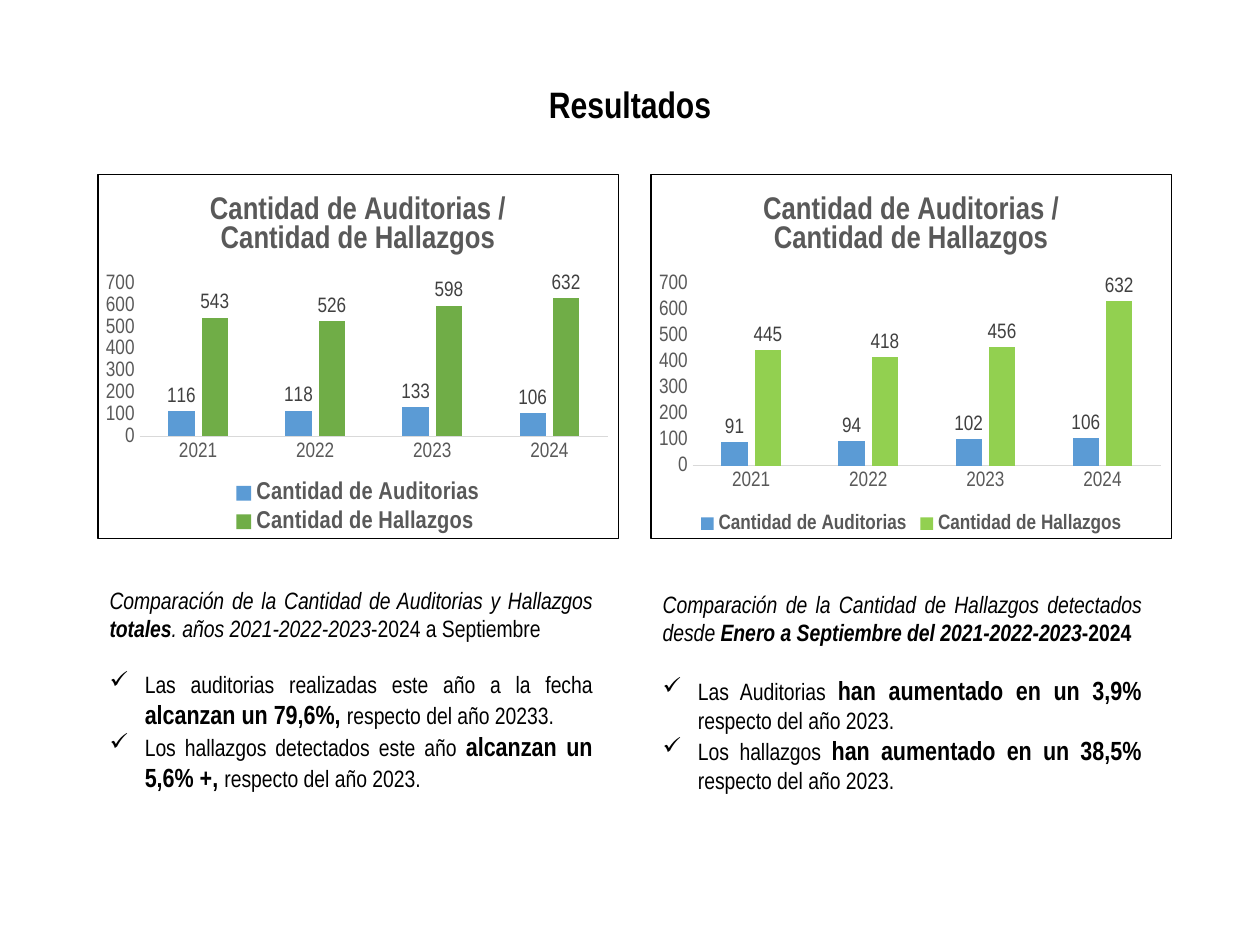
from lxml.etree import SubElement
from pptx import Presentation
from pptx.chart.data import CategoryChartData
from pptx.dml.color import RGBColor
from pptx.enum.chart import XL_CHART_TYPE as ChartType
from pptx.enum.chart import XL_LABEL_POSITION as LabelPosition
from pptx.enum.chart import XL_LEGEND_POSITION as LegendPosition
from pptx.enum.chart import XL_TICK_MARK as TickMark
from pptx.enum.text import MSO_ANCHOR, MSO_AUTO_SIZE, PP_ALIGN
from pptx.oxml import parse_xml
from pptx.oxml.ns import nsdecls, qn
from pptx.util import Cm, Pt

FONT = "Arial Narrow"
COLORS = {
    "text": "000000",
    "chart_text": "595959",
    "label": "404040",
    "axis": "D9D9D9",
    "audits": "5B9BD5",
    "findings": "70AD47",
    "findings_to_september": "92D050",
    "background": "FFFFFF",
}
YEARS = ["2021", "2022", "2023", "2024"]
CHART_TITLE = "Cantidad de Auditorias / Cantidad de Hallazgos"
CHART_TOP, CHART_WIDTH, CHART_HEIGHT = Cm(3.5), Cm(10.52), Cm(7.37)
LEFT_COLUMN, RIGHT_COLUMN = Cm(1.96), Cm(13.11)
BULLET_INDENT = Cm(0.71)


def color(name):
    """Return the named colour."""
    return RGBColor.from_string(COLORS[name])


def set_font(font, size, color_name, bold=False):
    """Apply the slide's typeface with a size, colour and weight."""
    font.name, font.size, font.bold = FONT, Pt(size), bold
    font.color.rgb = color(color_name)


def add_title(slide, text):
    """Place and format the slide title."""
    title = slide.shapes.title
    title.left, title.top, title.width, title.height = Cm(6.5), Cm(1.52), Cm(12.4), Cm(1.15)
    frame = title.text_frame
    frame.text = text
    frame.auto_size = MSO_AUTO_SIZE.NONE
    frame.vertical_anchor = MSO_ANCHOR.TOP
    frame.paragraphs[0].alignment = PP_ALIGN.CENTER
    set_font(frame.paragraphs[0].font, 21, "text", True)


def add_border(chart):
    """Give the chart area a white fill and a thin outline."""
    border = parse_xml(
        f'<c:spPr {nsdecls("c", "a")}>'
        f'<a:solidFill><a:srgbClr val="{COLORS["background"]}"/></a:solidFill>'
        f'<a:ln w="{Pt(0.75)}"><a:solidFill><a:srgbClr val="{COLORS["text"]}"/></a:solidFill></a:ln>'
        "</c:spPr>"
    )
    chart.element.find(qn("c:chart")).addnext(border)


def set_plot_layout(chart, height):
    """Fix the inner plot area, in fractions of the chart."""
    plot_area = chart.element.find(qn("c:chart")).find(qn("c:plotArea"))
    for old_layout in plot_area.findall(qn("c:layout")):
        plot_area.remove(old_layout)
    layout = parse_xml(f'<c:layout {nsdecls("c")}><c:manualLayout/></c:layout>')
    values = {"layoutTarget": "inner", "xMode": "edge", "yMode": "edge",
              "x": 0.08, "y": 0.3, "w": 0.9, "h": height}
    for tag, value in values.items():
        SubElement(layout[0], qn(f"c:{tag}")).set("val", str(value))
    plot_area.insert(0, layout)


def format_axes(chart):
    """Format both axes without gridlines or tick marks."""
    for axis in (chart.category_axis, chart.value_axis):
        axis.has_major_gridlines = False
        axis.major_tick_mark = axis.minor_tick_mark = TickMark.NONE
        set_font(axis.tick_labels.font, 12, "chart_text")
    line = chart.category_axis.format.line
    line.color.rgb, line.width = color("axis"), Pt(0.75)
    chart.value_axis.format.line.fill.background()
    chart.value_axis.minimum_scale = 0
    chart.value_axis.maximum_scale = 700
    chart.value_axis.major_unit = 100


def add_column_chart(slide, left, audits, findings, findings_color, legend_size, plot_height):
    """Add a clustered column chart of audits and findings by year."""
    data = CategoryChartData()
    data.categories = YEARS
    data.add_series("Cantidad de Auditorias", audits)
    data.add_series("Cantidad de Hallazgos", findings)
    chart = slide.shapes.add_chart(
        ChartType.COLUMN_CLUSTERED, left, CHART_TOP, CHART_WIDTH, CHART_HEIGHT, data
    ).chart
    set_font(chart.font, 10, "text")
    add_border(chart)
    chart.has_title = True
    chart.chart_title.include_in_layout = False
    title_frame = chart.chart_title.text_frame
    title_frame.text = CHART_TITLE
    set_font(title_frame.paragraphs[0].font, 18, "chart_text", True)
    chart.has_legend = True
    chart.legend.position = LegendPosition.BOTTOM
    chart.legend.include_in_layout = False
    set_font(chart.legend.font, legend_size, "chart_text", True)
    format_axes(chart)
    plot = chart.plots[0]
    plot.gap_width, plot.overlap, plot.vary_by_categories = 219, -27, False
    for series, color_name in zip(plot.series, ("audits", findings_color)):
        series.format.fill.solid()
        series.format.fill.fore_color.rgb = color(color_name)
        labels = series.data_labels
        labels.show_value = True
        labels.position = LabelPosition.OUTSIDE_END
        set_font(labels.font, 12, "label")
    set_plot_layout(chart, plot_height)


def add_check_bullet(paragraph):
    """Give a paragraph a check-mark bullet with a hanging indent."""
    properties = paragraph._p.get_or_add_pPr()
    properties.set("marL", str(BULLET_INDENT))
    properties.set("indent", str(-BULLET_INDENT))
    SubElement(properties, qn("a:buChar")).set("char", "✓")


def add_runs(paragraph, runs):
    """Add justified runs given as text, size, bold and italic."""
    paragraph.alignment = PP_ALIGN.JUSTIFY
    set_font(paragraph.font, 13.5, "text")
    for text, size, bold, italic in runs:
        run = paragraph.add_run()
        run.text = text
        run.font.size, run.font.bold, run.font.italic = Pt(size), bold, italic


def add_commentary(slide, left, top, width, height, heading, findings):
    """Add a heading followed by check-marked findings with a stressed middle."""
    frame = slide.shapes.add_textbox(left, top, width, height).text_frame
    frame.word_wrap = True
    frame.auto_size = MSO_AUTO_SIZE.SHAPE_TO_FIT_TEXT
    add_runs(frame.paragraphs[0], [(text, 13.5, bold, italic) for text, bold, italic in heading])
    for index, (start, stressed, end) in enumerate(findings):
        paragraph = frame.add_paragraph()
        if index == 0:
            paragraph.space_before = Pt(16)
        add_check_bullet(paragraph)
        add_runs(paragraph, [(start, 13.5, False, False), (stressed, 15, True, False),
                             (end, 13.5, False, False)])


def main():
    """Build the results slide and save it."""
    presentation = Presentation()
    presentation.slide_width, presentation.slide_height = Cm(25.4), Cm(19.05)
    slide = presentation.slides.add_slide(presentation.slide_layouts[5])
    add_title(slide, "Resultados")
    add_column_chart(slide, LEFT_COLUMN, (116, 118, 133, 106), (543, 526, 598, 632),
                     "findings", 14, 0.42)
    add_commentary(
        slide, LEFT_COLUMN, Cm(11.68), Cm(10.24), Cm(4.5),
        [("Comparación de la Cantidad de Auditorias y Hallazgos ", False, True),
         ("totales", True, True),
         (". años 2021-2022-2023", False, True),
         ("-2024 a Septiembre", False, False)],
        [("Las auditorias realizadas este año a la fecha ", "alcanzan un 79,6%, ",
          "respecto del año 20233."),
         ("Los hallazgos detectados este año ", "alcanzan un 5,6% +, ",
          "respecto del año 2023.")],
    )
    add_column_chart(slide, RIGHT_COLUMN, (91, 94, 102, 106), (445, 418, 456, 632),
                     "findings_to_september", 12, 0.5)
    add_commentary(
        slide, RIGHT_COLUMN, Cm(11.76), Cm(10.16), Cm(4.42),
        [("Comparación de la Cantidad de Hallazgos detectados desde ", False, True),
         ("Enero a Septiembre del 2021-2022-2023", True, True),
         ("-2024", True, False)],
        [("Las Auditorias ", "han aumentado en un 3,9% ", "respecto del año 2023."),
         ("Los hallazgos ", "han aumentado en un 38,5% ", "respecto del año 2023.")],
    )
    presentation.save("out.pptx")


if __name__ == "__main__":
    main()
